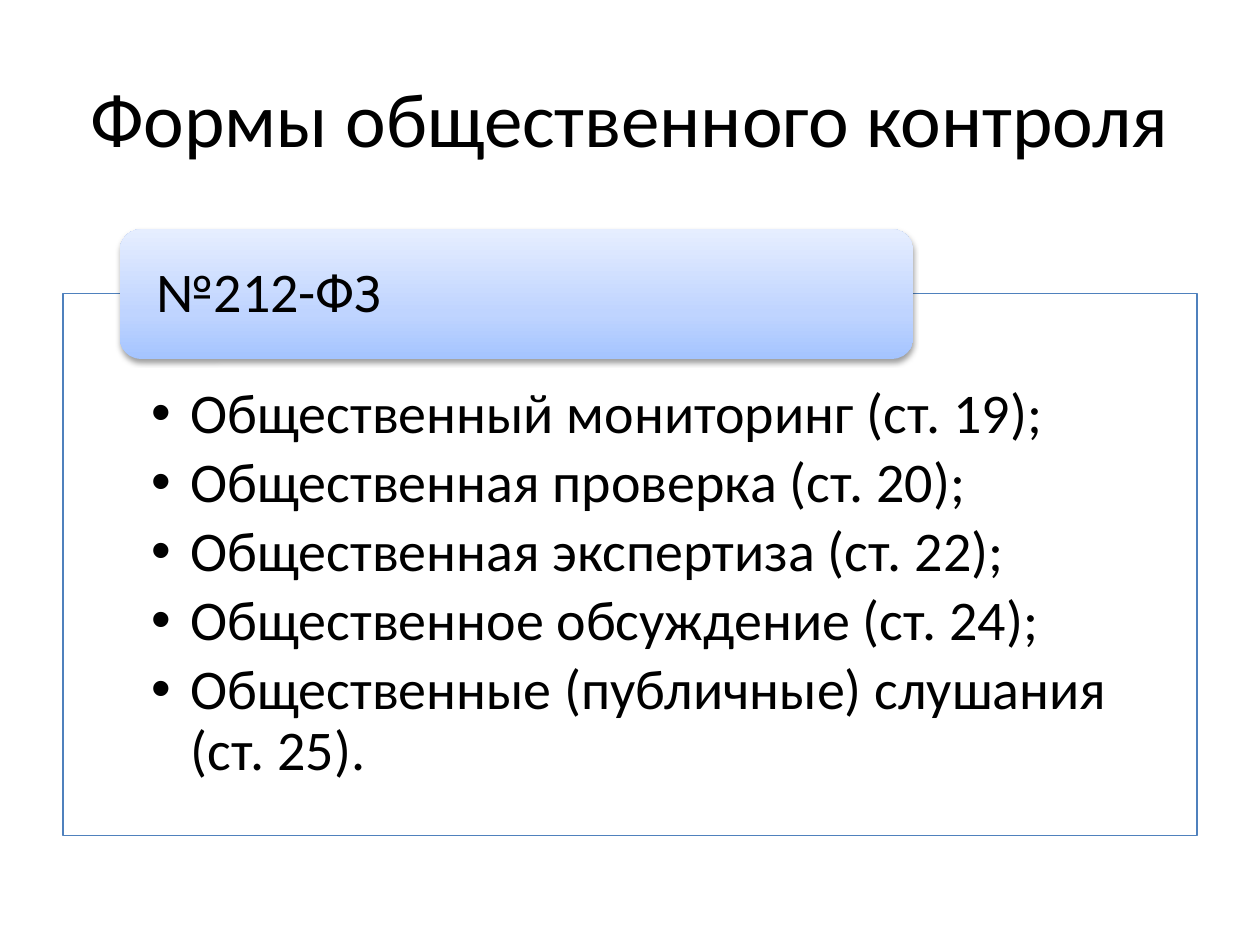
from lxml import etree
from pptx import Presentation
from pptx.dml.color import RGBColor
from pptx.enum.shapes import MSO_SHAPE
from pptx.enum.text import MSO_ANCHOR, PP_ALIGN
from pptx.oxml import parse_xml
from pptx.oxml.ns import qn
from pptx.util import Pt

RECT = MSO_SHAPE.RECTANGLE
ROUND = MSO_SHAPE.ROUNDED_RECTANGLE
TOP, MIDDLE = MSO_ANCHOR.TOP, MSO_ANCHOR.MIDDLE
LEFT, CENTER = PP_ALIGN.LEFT, PP_ALIGN.CENTER

BLACK = RGBColor(0x00, 0x00, 0x00)
WHITE = RGBColor(0xFF, 0xFF, 0xFF)
BLUE = RGBColor(0x4F, 0x81, 0xBD)
DEEP = RGBColor(0xA4, 0xC4, 0xFF)
MID = RGBColor(0xBF, 0xD4, 0xFF)
PALE = RGBColor(0xE6, 0xEE, 0xFF)

FONT = "Calibri"
NS = 'xmlns:a="http://schemas.openxmlformats.org/drawingml/2006/main"'
MARGIN, WIDTH = 36, 648

TITLE = "Формы общественного контроля"
LAW = "№212-ФЗ"
FORMS = [
    "Общественный мониторинг (ст. 19);",
    "Общественная проверка (ст. 20);",
    "Общественная экспертиза (ст. 22);",
    "Общественное обсуждение (ст. 24);",
    "Общественные (публичные) слушания (ст. 25).",
]


def set_frame(frame, insets, anchor):
    frame.word_wrap = True
    frame.vertical_anchor = anchor
    left, top, right, bottom = insets
    frame.margin_left, frame.margin_top = Pt(left), Pt(top)
    frame.margin_right, frame.margin_bottom = Pt(right), Pt(bottom)


def style(para, size, align=LEFT):
    para.alignment = align
    for run in para.runs:
        run.font.name = FONT
        run.font.size = Pt(size)
        run.font.color.rgb = BLACK


def add_bullet(para, indent):
    props = para._p.get_or_add_pPr()
    props.set("marL", str(Pt(indent)))
    props.set("indent", str(-Pt(indent)))
    etree.SubElement(props, qn("a:buFont")).set("typeface", "Arial")
    etree.SubElement(props, qn("a:buChar")).set("char", "•")


def add_shape(slide, kind, left, top, width, height):
    shape = slide.shapes.add_shape(kind, Pt(left), Pt(top), Pt(width), Pt(height))
    shape.shadow.inherit = False
    return shape


def add_title(slide):
    box = slide.shapes.add_textbox(Pt(MARGIN), Pt(21.6), Pt(WIDTH), Pt(90))
    set_frame(box.text_frame, (7.2, 3.6, 7.2, 3.6), MIDDLE)
    box.text_frame.text = TITLE
    style(box.text_frame.paragraphs[0], 44, CENTER)


def add_panel(slide):
    """Outlined box that holds the bulleted forms of control."""
    panel = add_shape(slide, RECT, MARGIN, 167.8, WIDTH, 309.6)
    panel.fill.solid()
    panel.fill.fore_color.rgb = WHITE
    panel.line.color.rgb = BLUE
    panel.line.width = Pt(0.75)
    frame = panel.text_frame
    set_frame(frame, (50.4, 52.5, 50.4, 18), TOP)
    frame.text = "\n".join(FORMS)
    for para in frame.paragraphs:
        add_bullet(para, 22.5)
        para.line_spacing = 0.9
        para.space_after = Pt(4.8)
        style(para, 32)


def add_shade(shape):
    """Vertical gradient, darkest at the bottom, and a soft drop shadow."""
    stops = "".join(
        f'<a:gs pos="{pos * 1000}"><a:srgbClr val="{color}"/></a:gs>'
        for pos, color in ((0, DEEP), (35, MID), (100, PALE))
    )
    props = shape._element.spPr
    effects = props.find(qn("a:effectLst"))
    shape.line.fill.background()
    props.find(qn("a:prstGeom")).addnext(parse_xml(
        f'<a:gradFill {NS} rotWithShape="1"><a:gsLst>{stops}</a:gsLst>'
        '<a:lin ang="16200000" scaled="0"/></a:gradFill>'
    ))
    effects.append(parse_xml(
        f'<a:outerShdw {NS} blurRad="{Pt(3.1)}" dist="{Pt(1.6)}" dir="5400000" '
        f'rotWithShape="0"><a:srgbClr val="{BLACK}"><a:alpha val="38000"/>'
        '</a:srgbClr></a:outerShdw>'
    ))


def add_tab(slide):
    """Rounded heading laid over the top edge of the panel."""
    tab = add_shape(slide, ROUND, 68.4, 131, 453.6, 74.2)
    add_shade(tab)
    set_frame(tab.text_frame, (17.3, 0, 17.3, 0), MIDDLE)
    tab.text_frame.text = LAW
    para = tab.text_frame.paragraphs[0]
    para.line_spacing = 0.9
    style(para, 32)


def main():
    deck = Presentation()
    deck.slide_width, deck.slide_height = Pt(720), Pt(540)
    slide = deck.slides.add_slide(deck.slide_layouts[6])
    add_title(slide)
    add_panel(slide)
    add_tab(slide)
    deck.save("out.pptx")


if __name__ == "__main__":
    main()
